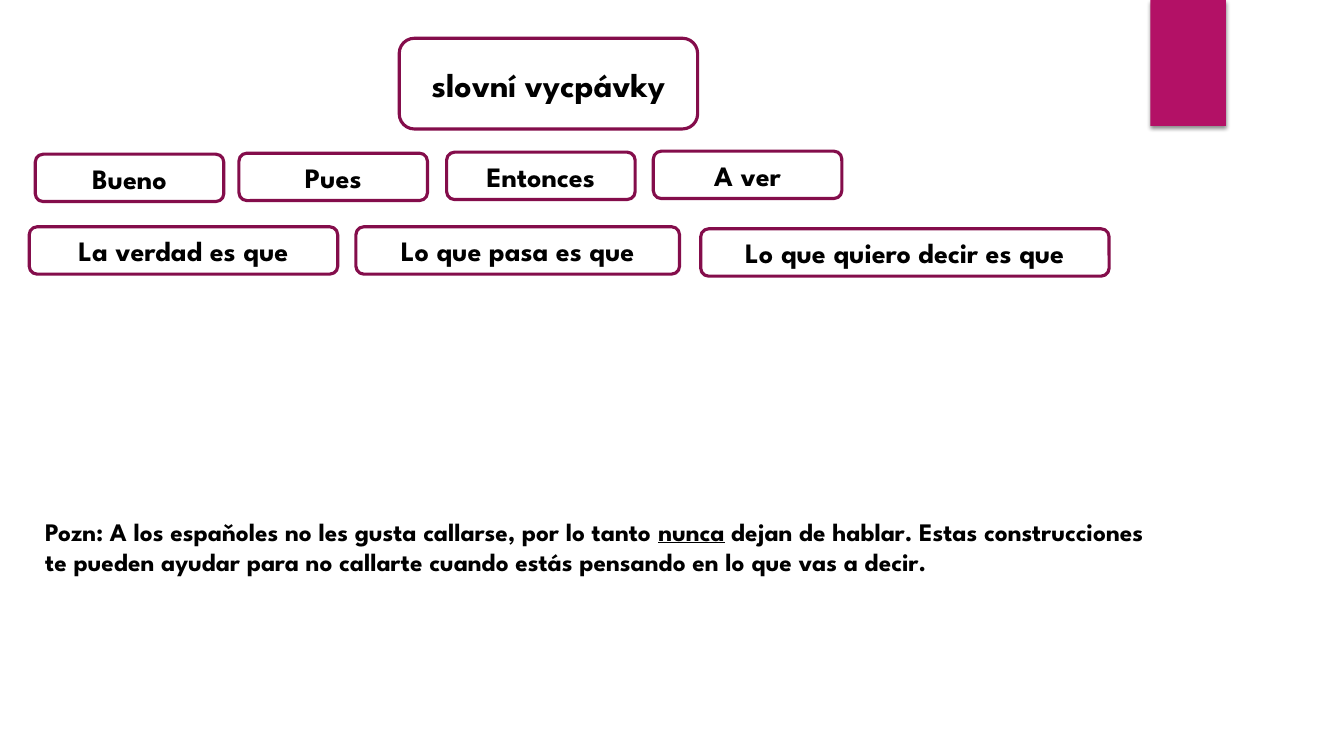
from lxml import etree
from pptx import Presentation
from pptx import util as u
from pptx.dml.color import RGBColor
from pptx.enum import shapes, text
from pptx.oxml import ns

PX = 9144  # 100 px to the inch
FONT = "League Spartan"
BLACK, WHITE, PINK, PLUM = "000000", "FFFFFF", "B31166", "840D4B"

CHIP_HEIGHT = 47
SHORT_FILLERS = [("Bueno", 35, 153, 187), ("Pues", 237, 152, 187),
                 ("Entonces", 443, 151, 187), ("A ver", 648, 150, 187)]
LONG_FILLERS = [("La verdad es que", 29, 225, 306),
                ("Lo que pasa es que", 353, 225, 321),
                ("Lo que quiero decir es que", 695, 227, 405)]
NOTE = [
    [("Pozn: A los espaňoles no les gusta callarse, por lo tanto ", False),
     ("nunca", True),
     (" dejan de hablar. Estas construcciones", False)],
    [("te pueden ayudar para no callarte cuando estás pensando en lo que vas a decir.", False)],
]


def colour(code):
    return RGBColor.from_string(code)


def emu(box):
    return [u.Emu(length * PX) for length in box]


def add_span(para, words, size, underline=False):
    span = para.add_run()
    span.text = words
    font = span.font
    font.name, font.size, font.bold = FONT, u.Pt(size), True
    font.color.rgb = colour(BLACK)
    if underline:
        font.underline = True


def centre_words(shape, words, size):
    frame = shape.text_frame
    frame.word_wrap = True
    frame.vertical_anchor = text.MSO_ANCHOR.MIDDLE
    para = frame.paragraphs[0]
    para.alignment = text.PP_ALIGN.CENTER
    add_span(para, words, size)


def add_frame(page, box):
    """Place a white rounded box with a plum outline."""
    frame = page.shapes.add_shape(shapes.MSO_SHAPE.ROUNDED_RECTANGLE, *emu(box))
    frame.shadow.inherit = False
    frame.fill.solid()
    frame.fill.fore_color.rgb = colour(WHITE)
    frame.line.color.rgb = colour(PLUM)
    frame.line.width = u.Pt(2.25)
    return frame


def add_ribbon(page, box):
    ribbon = page.shapes.add_shape(shapes.MSO_SHAPE.RECTANGLE, *emu(box))
    ribbon.fill.solid()
    ribbon.fill.fore_color.rgb = colour(PINK)
    ribbon.line.fill.background()
    # Soft shadow below the ribbon
    ribbon.shadow.inherit = False
    effects = ribbon._element.spPr.find(ns.qn("a:effectLst"))
    shadow = etree.SubElement(effects, ns.qn("a:outerShdw"), blurRad=str(u.Pt(3)),
                              dist=str(u.Pt(2)), dir="5400000", rotWithShape="0")
    tint = etree.SubElement(shadow, ns.qn("a:srgbClr"), val=BLACK)
    etree.SubElement(tint, ns.qn("a:alpha"), val="45000")


def add_heading(page, box, words):
    add_frame(page, box)
    title = page.shapes.title
    title.left, title.top, title.width, title.height = emu(box)
    centre_words(title, words, 24)
    # Bring the title in front of its frame
    page.shapes._spTree.append(title._element)


def add_fillers(page, fillers):
    for words, left, top, width in fillers:
        centre_words(add_frame(page, (left, top, width, CHIP_HEIGHT)), words, 20)


def add_note(page, box, lines):
    frame = page.shapes.add_textbox(*emu(box)).text_frame
    frame.word_wrap = True
    for index, line in enumerate(lines):
        para = frame.add_paragraph() if index else frame.paragraphs[0]
        for words, underline in line:
            add_span(para, words, 18, underline)


def main():
    deck = Presentation()
    deck.slide_width, deck.slide_height = emu((1333, 750))
    page = deck.slides.add_slide(deck.slide_layouts[5])
    page.background.fill.solid()
    page.background.fill.fore_color.rgb = colour(WHITE)

    add_ribbon(page, (1141, 0, 75, 125))
    add_heading(page, (396, 38, 296, 90), "slovní vycpávky")
    add_fillers(page, SHORT_FILLERS + LONG_FILLERS)
    add_note(page, (35, 507, 1248, 71), NOTE)
    deck.save("out.pptx")


if __name__ == "__main__":
    main()
